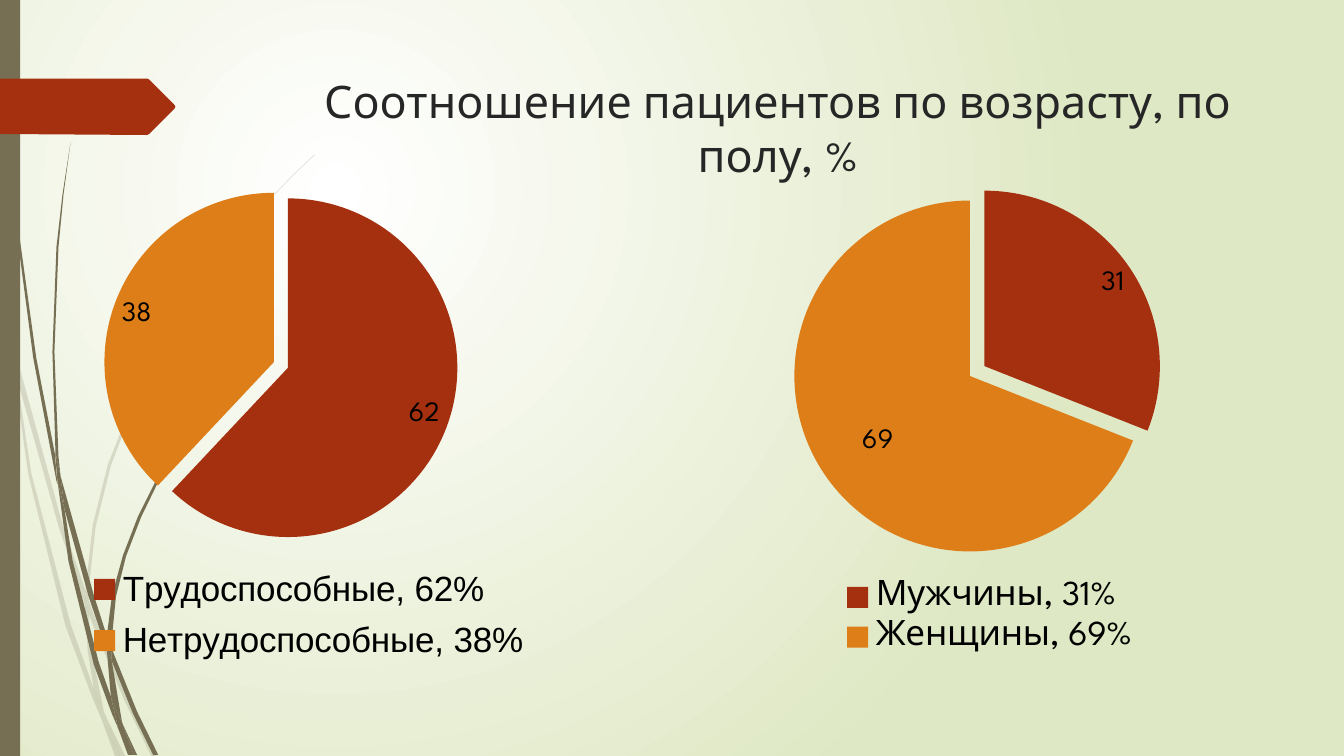
from lxml import etree
from pptx import Presentation
from pptx.chart.data import CategoryChartData
from pptx.dml.color import RGBColor
from pptx.enum.chart import XL_CHART_TYPE, XL_LABEL_POSITION, XL_LEGEND_POSITION
from pptx.enum.shapes import MSO_SHAPE
from pptx.enum.text import MSO_ANCHOR, PP_ALIGN
from pptx.oxml.ns import qn
from pptx.util import Inches, Pt

PIE = XL_CHART_TYPE.PIE
IN_END = XL_LABEL_POSITION.INSIDE_END
RIGHT = XL_LEGEND_POSITION.RIGHT
RECT = MSO_SHAPE.RECTANGLE
TOP = MSO_ANCHOR.TOP
CENTER = PP_ALIGN.CENTER

WHITE = RGBColor(0xFF, 0xFF, 0xFF)
LIME = RGBColor(0xDF, 0xE8, 0xC4)
OLIVE = RGBColor(0x76, 0x6F, 0x54)
RUST = RGBColor(0xA5, 0x30, 0x10)
AMBER = RGBColor(0xDE, 0x7E, 0x18)
DARK = RGBColor(0x26, 0x26, 0x26)
BLACK = RGBColor(0, 0, 0)
FACE = "League Spartan"

# Outlines of the grass blades, as x, y points in inches
PALE = [
    [(.11, 3.5), (.09, 3.22), (0, 2.82), (0, 2.99), (.1, 3.44)],
    [(.58, 5.22), (.84, 5.99), (.85, 5.86), (.62, 5.2), (.14, 3.45), (.17, 3.76)],
    [(.92, 6.07), (.88, 5.96), (.88, 6.1), (1.23, 6.94), (1.5, 7.5), (1.55, 7.5),
     (1.27, 6.92)],
    [(1.19, 7.5), (1.24, 7.5), (1.05, 7.11)],
    [(.93, 6.83), (.7, 6.19), (.31, 4.69), (.17, 3.76), (.11, 3.5), (.28, 4.7),
     (.65, 6.21), (.92, 6.93), (1.01, 7.14), (.99, 7.07)],
    [(.84, 5.99), (.87, 6.46), (.93, 6.83), (.96, 6.92), (1.05, 7.11), (1.03, 7.06),
     (.91, 6.46), (.88, 6.1), (.88, 6.08)],
    [(.88, 5.84), (.95, 5.22), (1.1, 4.62), (1.32, 4.04), (1.6, 3.49), (1.93, 2.95),
     (2.29, 2.45), (2.68, 1.98), (2.9, 1.75), (3.12, 1.54), (3.12, 1.53), (2.89, 1.75),
     (2.68, 1.97), (2.28, 2.44), (1.91, 2.94), (1.58, 3.48), (1.3, 4.03), (1.07, 4.61),
     (.92, 5.21), (.85, 5.84), (.85, 5.86), (.88, 5.96)],
    [(1.01, 7.14), (1.14, 7.5), (1.19, 7.5)],
    [(.88, 6.08), (.88, 6.1), (.88, 5.96), (.85, 5.86), (.84, 5.99)],
    [(.96, 6.92), (.93, 6.83), (.99, 7.07), (1.01, 7.14), (1.19, 7.5), (1.05, 7.11)],
]
DEEP = [
    [(.07, 1.1), (.17, 2.33), (.33, 3.55), (.56, 4.77), (.57, 4.81), (.55, 4.57),
     (.55, 4.53), (.36, 3.55), (.19, 2.32), (.08, 1.09), (.05, .48), (.04, 0),
     (.03, 0), (.04, .48)],
    [(.88, 5.92), (1.06, 6.45), (1.06, 6.33), (1.06, 6.31), (.93, 5.9), (.6, 4.72),
     (.64, 5.05)],
    [(1.13, 6.49), (1.1, 6.41), (1.11, 6.56), (1.32, 7.08), (1.52, 7.49), (1.57, 7.49),
     (1.36, 7.06)],
    [(1.1, 6.91), (.98, 6.57), (.72, 5.56), (.64, 5.05), (.57, 4.77), (.68, 5.57),
     (.93, 6.59), (1.11, 7.08), (1.17, 7.22), (1.16, 7.17)],
    [(.6, 4.72), (.58, 4.53), (.54, 3.49), (.58, 2.45), (.63, 1.93), (.7, 1.41),
     (.62, 1.93), (.56, 2.45), (.52, 3.49), (.55, 4.49)],
    [(1.33, 7.49), (1.36, 7.49), (1.22, 7.19)],
    [(.57, 4.77), (.64, 5.05), (.6, 4.72), (.55, 4.49), (.55, 4.53)],
    [(1.11, 6.33), (1.15, 5.92), (1.25, 5.52), (1.4, 5.13), (1.58, 4.76), (1.8, 4.4),
     (2.05, 4.06), (2.31, 3.74), (2.45, 3.59), (2.61, 3.44), (2.6, 3.44), (2.45, 3.58),
     (2.31, 3.73), (2.04, 4.05), (1.78, 4.39), (1.56, 4.74), (1.37, 5.12), (1.22, 5.51),
     (1.11, 5.91), (1.06, 6.31), (1.1, 6.41)],
    [(1.17, 7.22), (1.27, 7.49), (1.31, 7.49)],
    [(1.06, 6.45), (1.1, 6.91), (1.16, 7.06), (1.22, 7.19), (1.21, 7.16), (1.11, 6.56),
     (1.09, 6.51)],
    [(1.06, 6.45), (1.09, 6.51), (1.11, 6.56), (1.1, 6.41), (1.06, 6.31), (1.06, 6.33)],
    [(1.16, 7.06), (1.1, 6.91), (1.16, 7.17), (1.17, 7.22), (1.3, 7.49), (1.33, 7.49),
     (1.22, 7.19)],
]
TAG = [(0, 0), (1.46, 0), (1.48, .01), (1.73, .26), (1.74, .28), (1.73, .3),
       (1.48, .55), (1.46, .56), (0, .55)]


def paint(shape, color, alpha=None):
    shape.shadow.inherit = False
    shape.fill.solid()
    shape.fill.fore_color.rgb = color
    shape.line.fill.background()
    if alpha:
        tint = shape.element.spPr.find(".//" + qn("a:srgbClr"))
        etree.SubElement(tint, qn("a:alpha"), val=str(alpha * 1000))


def outline(shapes, box, points, color, alpha=None):
    dots = [(Inches(box[0] + x), Inches(box[1] + y)) for x, y in points]
    pen = shapes.build_freeform(*dots[0])
    pen.add_line_segments(dots[1:], close=True)
    paint(pen.convert_to_shape(), color, alpha)


def style(font, size, color=BLACK, face=FACE):
    font.size, font.name = Pt(size), face
    font.color.rgb = color


def write(frame, text, align=CENTER, anchor=TOP, **look):
    frame.word_wrap, frame.vertical_anchor = True, anchor
    para = frame.paragraphs[0]
    para.alignment = align
    run = para.add_run()
    run.text = text
    style(run.font, **look)


def backdrop(slide):
    fill = slide.background.fill
    fill.gradient()
    for stop, color, spot in zip(fill.gradient_stops, (WHITE, LIME), (0, 1)):
        stop.color.rgb, stop.position = color, spot
    grad = slide.element.find(".//" + qn("a:gradFill"))
    grad.remove(grad.find(qn("a:lin")))
    way = etree.SubElement(grad, qn("a:path"), {"path": "circle"})
    etree.SubElement(way, qn("a:fillToRect"), l="50000", t="50000", r="100000", b="100000")


def side(slide, box):
    # Grass blades, edge bar and arrow tag
    for blades, alpha in ((PALE, 20), (DEEP, None)):
        group = slide.shapes.add_group_shape()
        for blade in blades:
            outline(group.shapes, box, blade, OLIVE, alpha)
    x, y, wide, high = box
    bar = slide.shapes.add_shape(RECT, Inches(x), Inches(y), Inches(wide), Inches(high))
    paint(bar, OLIVE)
    outline(slide.shapes, (x, y + .78), TAG, RUST)


def heading(slide, box, text):
    title = slide.shapes.title
    title.left, title.top, title.width, title.height = map(Inches, box)
    write(title.text_frame, text, size=32, color=DARK)
    title.element.getparent().append(title.element)


def place(node, index, **spots):
    # Manual layout of a chart part
    for old in node.findall(qn("c:layout")):
        node.remove(old)
    layout = etree.Element(qn("c:layout"))
    manual = etree.SubElement(layout, qn("c:manualLayout"))
    for tag, val in spots.items():
        etree.SubElement(manual, qn("c:" + tag), val=str(val))
    node.insert(index, layout)


def frame(node, index, box, **modes):
    place(node, index, **modes, xMode="edge", yMode="edge", **dict(zip("xywh", box)))


def pie(slide, box, cats, vals, plot, key, burst, parts, size, face=FACE, nudge=None):
    data = CategoryChartData()
    data.categories = cats
    data.add_series("Series 1", vals)
    chart = slide.shapes.add_chart(PIE, *map(Inches, box), data).chart
    style(chart.font, size)
    chart.has_title = False
    chart.has_legend = True
    chart.legend.position, chart.legend.include_in_layout = RIGHT, False
    style(chart.legend.font, 25, face=face)
    area = chart.plots[0]
    area.vary_by_categories = True
    series = area.series[0]

    # Slices, with their pull from the centre
    for i, color in enumerate((RUST, AMBER)):
        fill = series.points[i].format.fill
        fill.solid()
        fill.fore_color.rgb = color
    for point, pull in zip(chart.element.xpath(".//c:dPt"), parts):
        pulled = etree.Element(qn("c:explosion"), val=str(pull))
        point.find(qn("c:spPr")).addprevious(pulled)
    if burst:
        first = chart.element.xpath(".//c:dPt")[0]
        first.addprevious(etree.Element(qn("c:explosion"), val=str(burst)))

    # Value labels
    labels = series.data_labels
    labels.show_value, labels.position = True, IN_END
    style(labels.font, 20)
    if nudge:
        label = series.points[1].data_label
        style(label.font, 20)
        label.position = IN_END
        place(chart.element.xpath(".//c:dLbl")[0], 1, x=nudge[0], y=nudge[1])

    frame(chart.element.xpath(".//c:plotArea")[0], 0, plot, layoutTarget="inner")
    frame(chart.element.xpath(".//c:legend")[0], 1, key)


def main():
    deck = Presentation()
    deck.slide_width, deck.slide_height = Inches(13.33), Inches(7.5)
    slide = deck.slides.add_slide(deck.slide_layouts[5])
    backdrop(slide)
    side(slide, (0, 0, .2, 7.5))
    heading(slide, (2.84, .68, 9.75, 1.4), "Соотношение пациентов по возрасту, по полу, %")
    pie(slide, (.47, 1.37, 6.91, 5.7), ("Трудоспособные, 62%", "Нетрудоспособные, 38%"),
        (62, 38), (.06, .02, .53, .74), (.05, .73, .65, .2), 9, (9, 0), 12, face="Arial")
    pie(slide, (7.42, 1.5, 6.47, 5.44), ("Мужчины, 31%", "Женщины, 69%"),
        (31, 69), (.07, .09, .54, .64), (.13, .77, .48, .16), 0, (10, 0), 18,
        nudge=(.05, -.03))
    deck.save("out.pptx")


if __name__ == "__main__":
    main()
